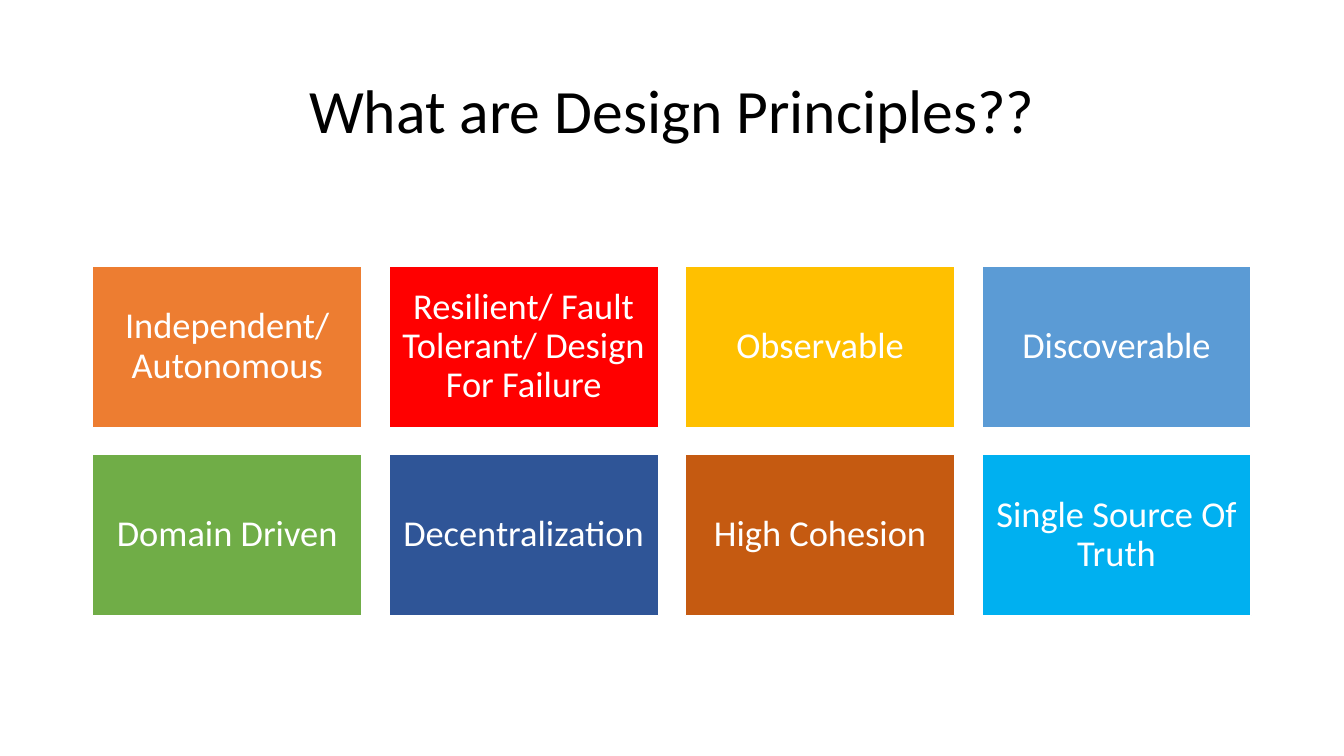
from pptx import Presentation
from pptx.dml.color import RGBColor
from pptx.enum.shapes import MSO_SHAPE
from pptx.enum.text import MSO_ANCHOR, PP_ALIGN
from pptx.util import Inches, Pt

RECTANGLE = MSO_SHAPE.RECTANGLE
MIDDLE = MSO_ANCHOR.MIDDLE
CENTER = PP_ALIGN.CENTER

FONT = "Calibri"
COLORS = {
    "black": "000000",
    "white": "FFFFFF",
    "orange": "ED7D31",
    "red": "FF0000",
    "gold": "FFC000",
    "blue": "5B9BD5",
    "green": "70AD47",
    "navy": "2F5597",
    "rust": "C55A11",
    "sky": "00B0F0",
}

PRINCIPLES = [
    ("Independent/ Autonomous", "orange"),
    ("Resilient/ Fault Tolerant/ Design For Failure", "red"),
    ("Observable", "gold"),
    ("Discoverable", "blue"),
    ("Domain Driven", "green"),
    ("Decentralization", "navy"),
    ("High Cohesion", "rust"),
    ("Single Source Of Truth", "sky"),
]
COLUMNS = 4
LEFT, TOP = 0.92, 2.64
CARD_W, CARD_H = 2.67, 1.6
PITCH_X, PITCH_Y = 2.94, 1.87
CARD_INSET = 0.11


def rgb(name):
    return RGBColor.from_string(COLORS[name])


def set_text(sp, text, size, color):
    tf = sp.text_frame
    tf.word_wrap = True
    tf.vertical_anchor = MIDDLE
    p = tf.paragraphs[0]
    p.text = text
    p.alignment = CENTER
    p.line_spacing = 0.9
    p.font.name = FONT
    p.font.size = Pt(size)
    p.font.color.rgb = rgb(color)


def add_title(s, text):
    sp = s.shapes.add_textbox(Inches(LEFT), Inches(0.4), Inches(11.5), Inches(1.45))
    set_text(sp, text, 44, "black")


def add_card(s, x, y, text, color):
    sp = s.shapes.add_shape(
        RECTANGLE, Inches(x), Inches(y), Inches(CARD_W), Inches(CARD_H)
    )
    sp.shadow.inherit = False
    sp.fill.solid()
    sp.fill.fore_color.rgb = rgb(color)
    sp.line.color.rgb = rgb("white")
    sp.line.width = Pt(1)
    set_text(sp, text, 26, "white")
    tf = sp.text_frame
    tf.margin_left = tf.margin_right = Inches(CARD_INSET)
    tf.margin_top = tf.margin_bottom = Inches(CARD_INSET)


def main():
    prs = Presentation()
    prs.slide_width = Inches(13.33)
    prs.slide_height = Inches(7.5)
    s = prs.slides.add_slide(prs.slide_layouts[6])
    add_title(s, "What are Design Principles??")
    for i, (text, color) in enumerate(PRINCIPLES):
        row, col = divmod(i, COLUMNS)
        add_card(s, LEFT + col * PITCH_X, TOP + row * PITCH_Y, text, color)
    prs.save("out.pptx")


if __name__ == "__main__":
    main()
